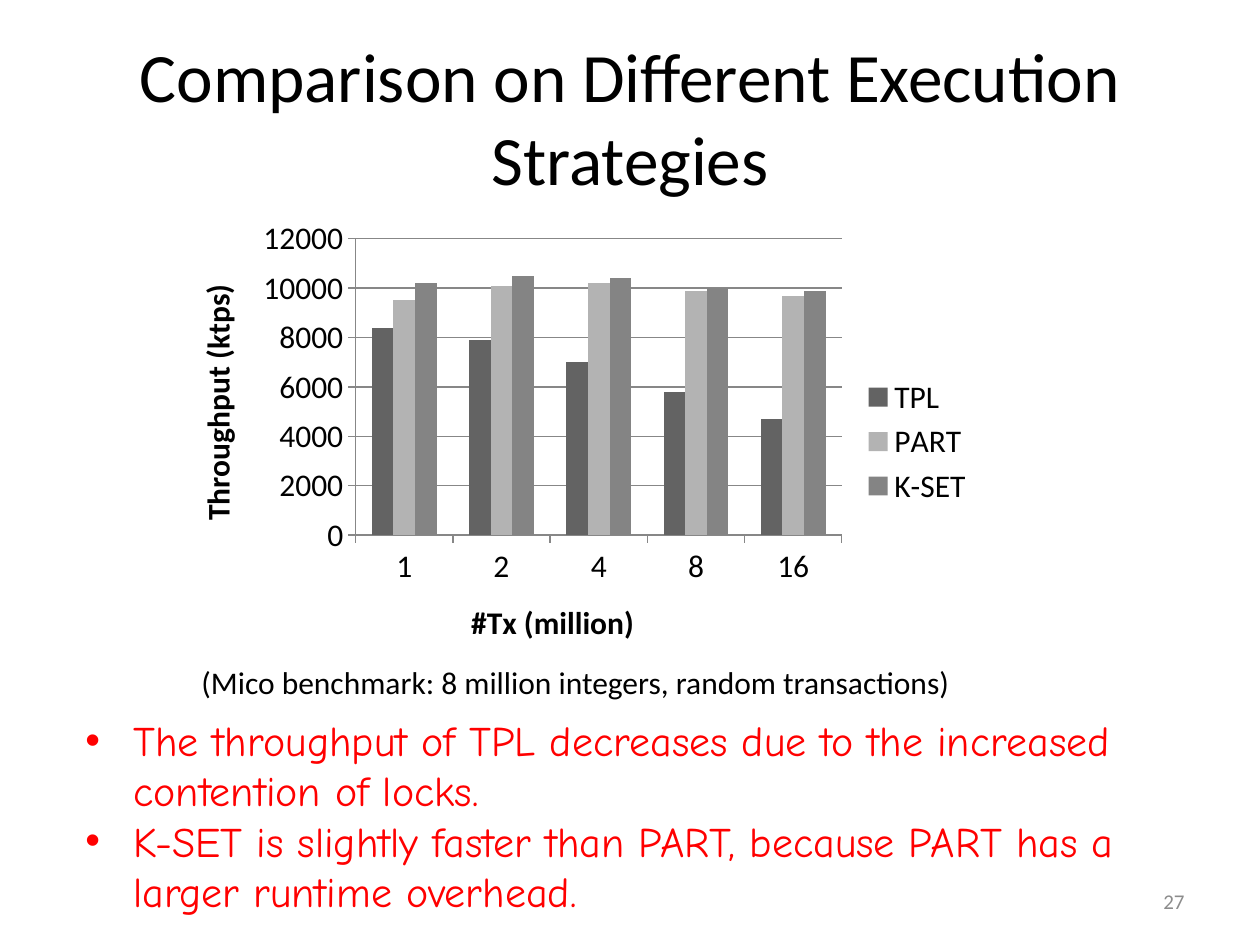
from dataclasses import dataclass

from lxml.etree import SubElement
from pptx import Presentation
from pptx.chart.data import CategoryChartData
from pptx.dml.color import RGBColor
from pptx.enum.chart import XL_CHART_TYPE as ChartType
from pptx.enum.chart import XL_LEGEND_POSITION as LegendPosition
from pptx.enum.chart import XL_TICK_MARK as TickMark
from pptx.enum.text import MSO_ANCHOR as Anchor
from pptx.enum.text import PP_ALIGN as Align
from pptx.oxml.ns import qn
from pptx.util import Inches, Pt

COLORS = {
    "black": "000000",
    "red": "FF0000",
    "page": "8C8C8C",
    "axis": "878787",
    "TPL": "636363",
    "PART": "B3B3B3",
    "K-SET": "848484",
}
THROUGHPUT = {
    "TPL": (8400, 7900, 7000, 5800, 4700),
    "PART": (9500, 10100, 10200, 9900, 9700),
    "K-SET": (10200, 10500, 10400, 10000, 9900),
}
TX_MILLIONS = ("1", "2", "4", "8", "16")


@dataclass(frozen=True)
class TextBlock:
    box: tuple[float, float, float, float]
    lines: tuple[str, ...]
    size: float
    color: str = "black"
    font: str = "Calibri"
    align: Align = Align.LEFT
    anchor: Anchor = Anchor.TOP
    wrap: bool = True
    bullets: bool = False


HEADING = TextBlock((0.5, 0.3, 9, 1.25),
                    ("Comparison on Different Execution Strategies",), 39.6,
                    align=Align.CENTER, anchor=Anchor.MIDDLE)
BLOCKS = (
    TextBlock((7.17, 6.95, 2.33, 0.4), ("27",), 12, "page",
              align=Align.RIGHT, anchor=Anchor.MIDDLE),
    TextBlock((1.5, 5.21, 6.21, 0.4),
              ("(Mico benchmark: 8 million integers, random transactions)",),
              18, wrap=False),
    TextBlock((0.58, 5.62, 8.75, 1.72),
              ("The throughput of TPL decreases due to the increased contention of locks.",
               "K-SET is slightly faster than PART, because PART has a larger runtime overhead."),
              24, "red", "Comic Neue", bullets=True),
)


def rgb(name: str) -> RGBColor:
    return RGBColor.from_string(COLORS[name])


def format_font(font, **values) -> None:
    color = values.pop("color", "black")
    for attribute, value in values.items():
        setattr(font, attribute, value)
    font.color.rgb = rgb(color)


def add_bullet(paragraph) -> None:
    properties = paragraph._p.get_or_add_pPr()
    properties.set("marL", str(Inches(0.38)))
    properties.set("indent", str(-Inches(0.38)))
    SubElement(properties, qn("a:buFont"), typeface="Arial")
    SubElement(properties, qn("a:buChar"), char="•")


def fill_text(shape, block: TextBlock) -> None:
    edges = ("left", "top", "width", "height")
    for edge, length in zip(edges, block.box):
        setattr(shape, edge, Inches(length))
    frame = shape.text_frame
    frame.word_wrap = block.wrap
    frame.vertical_anchor = block.anchor
    frame.text = "\n".join(block.lines)
    for paragraph in frame.paragraphs:
        paragraph.alignment = block.align
        format_font(paragraph.runs[0].font, name=block.font,
                    size=Pt(block.size), color=block.color)
        if block.bullets:
            add_bullet(paragraph)


def format_axis(axis, title: str) -> None:
    axis.major_tick_mark = TickMark.OUTSIDE
    axis.minor_tick_mark = TickMark.NONE
    axis.format.line.color.rgb = rgb("axis")
    axis.axis_title.text_frame.text = title
    run = axis.axis_title.text_frame.paragraphs[0].runs[0]
    format_font(run.font, name="Calibri", size=Pt(18), bold=True)


def add_throughput_chart(slide) -> None:
    data = CategoryChartData()
    data.categories = TX_MILLIONS
    for strategy, values in THROUGHPUT.items():
        data.add_series(strategy, values)
    box = map(Inches, (1.33, 1.67, 6.5, 3.67))
    chart = slide.shapes.add_chart(ChartType.COLUMN_CLUSTERED, *box, data).chart
    format_font(chart.font, name="Calibri", size=Pt(18))
    chart.has_title = False
    chart.has_legend = True
    chart.legend.position = LegendPosition.RIGHT
    chart.legend.include_in_layout = False

    # Axes and gridlines
    format_axis(chart.category_axis, "#Tx (million)")
    format_axis(chart.value_axis, "Throughput (ktps)")
    chart.value_axis.minimum_scale = 0
    chart.value_axis.maximum_scale = 12000
    chart.value_axis.major_unit = 2000
    chart.value_axis.major_gridlines.format.line.color.rgb = rgb("axis")

    # Columns
    columns = chart.plots[0]
    columns.gap_width = 150
    columns.overlap = 0
    columns.vary_by_categories = False
    for strategy in columns.series:
        strategy.format.fill.solid()
        strategy.format.fill.fore_color.rgb = rgb(strategy.name)


def main() -> None:
    presentation = Presentation()
    presentation.slide_width = Inches(10)
    presentation.slide_height = Inches(7.5)
    slide = presentation.slides.add_slide(presentation.slide_layouts[5])

    # Title, chart, then the remaining text
    fill_text(slide.shapes.title, HEADING)
    add_throughput_chart(slide)
    for block in BLOCKS:
        fill_text(slide.shapes.add_textbox(*map(Inches, block.box)), block)

    presentation.save("out.pptx")


if __name__ == "__main__":
    main()
